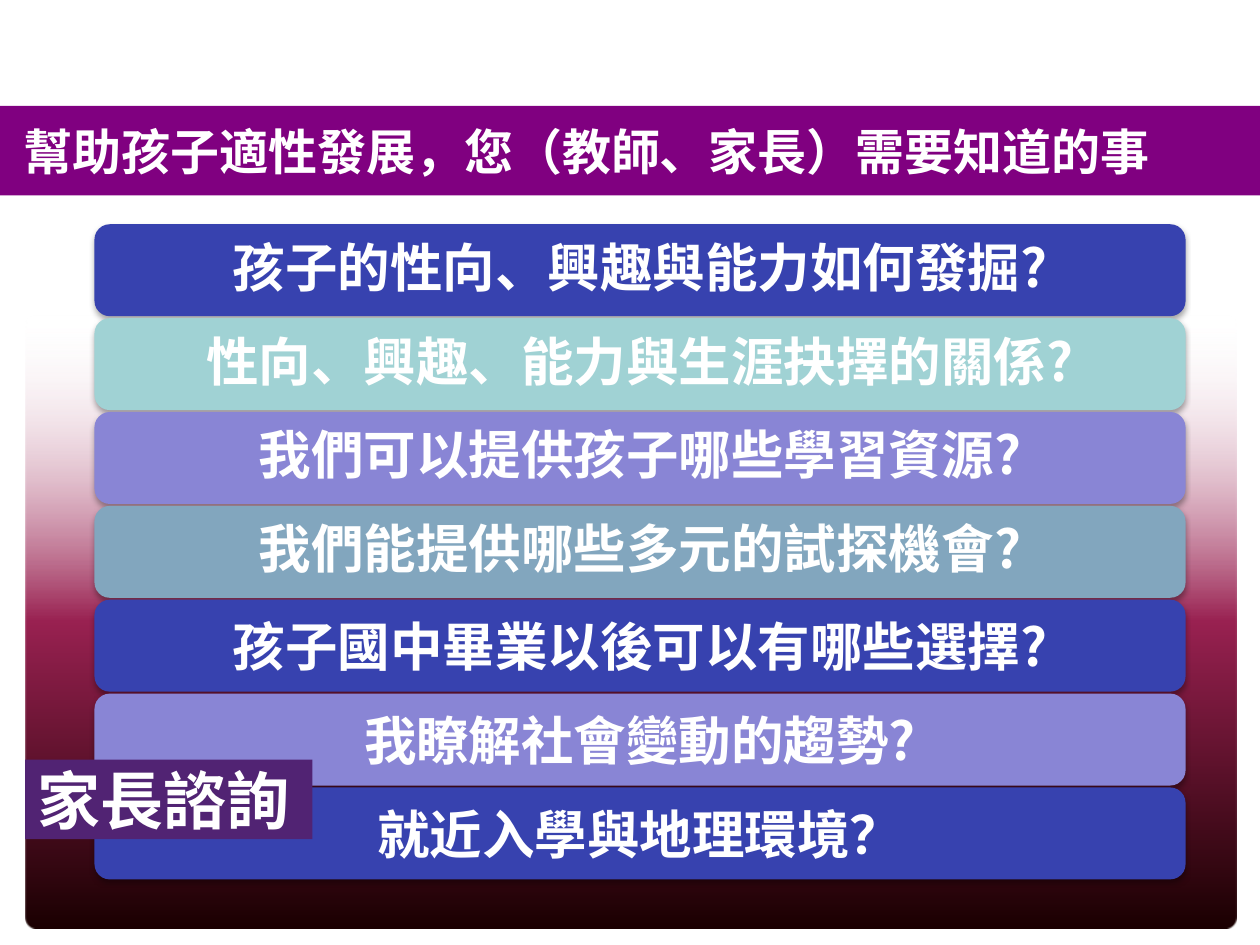
from lxml import etree
from pptx import Presentation
from pptx.dml.color import RGBColor
from pptx.enum.shapes import MSO_SHAPE
from pptx.enum.text import MSO_ANCHOR, PP_ALIGN
from pptx.oxml import parse_xml
from pptx.oxml.ns import qn
from pptx.util import Inches, Pt

FONT = "Noto Sans CJK SC"
NS = 'xmlns:a="http://schemas.openxmlformats.org/drawingml/2006/main"'
BLUE, TEAL, LILAC, STEEL = "3742AF", "A0D2D4", "8985D5", "82A6BE"

TITLE = "幫助孩子適性發展，您（教師、家長）需要知道的事"
TAG = "家長諮詢"
# question, fill, line spacing
QUESTIONS = [
    ("孩子的性向、興趣與能力如何發掘?", BLUE, 0.9),
    ("性向、興趣、能力與生涯抉擇的關係?", TEAL, 0.9),
    ("我們可以提供孩子哪些學習資源?", LILAC, 0.9),
    ("我們能提供哪些多元的試探機會?", STEEL, 0.9),
    ("孩子國中畢業以後可以有哪些選擇?", BLUE, 1.0),
    ("我瞭解社會變動的趨勢?", LILAC, 1.0),
    ("就近入學與地理環境？", BLUE, 1.0),
]
# position, colour, opacity (all in percent), from top to bottom
BACKDROP_STOPS = [(0, "FFFFFF", 0), (50, "992151", 100), (100, "1A0001", 100)]

LIST_LEFT, LIST_TOP, LIST_WIDTH = 0.75, 1.78, 8.66
ROW_HEIGHT, ROW_PITCH = 0.73, 0.745


def rgb(hex_colour):
    return RGBColor.from_string(hex_colour)


def add_box(kind, left, top, width, height, fill=None):
    box = slide.shapes.add_shape(kind, *map(Inches, (left, top, width, height)))
    box.shadow.inherit = False
    box.line.fill.background()
    if fill:
        box.fill.solid()
        box.fill.fore_color.rgb = rgb(fill)
    return box


def write(box, text, size, align=PP_ALIGN.LEFT, inset=0.1, spacing=1.0):
    frame = box.text_frame
    frame.word_wrap = True
    frame.vertical_anchor = MSO_ANCHOR.MIDDLE
    frame.margin_left = frame.margin_right = Inches(inset)
    paragraph = frame.paragraphs[0]
    paragraph.alignment = align
    paragraph.line_spacing = spacing
    run = paragraph.add_run()
    run.text = text
    run.font.size = Pt(size)
    run.font.bold = True
    run.font.name = FONT
    run.font.color.rgb = rgb("FFFFFF")
    east_asian = etree.SubElement(run.font._element, qn("a:ea"))
    east_asian.set("typeface", FONT)


def fade_down(box, stops):
    stop_xml = "".join(
        f'<a:gs pos="{pos * 1000}"><a:srgbClr val="{colour}">'
        f'<a:alpha val="{opacity * 1000}"/></a:srgbClr></a:gs>'
        for pos, colour, opacity in stops)
    gradient = parse_xml(f'<a:gradFill {NS} rotWithShape="1"><a:gsLst>{stop_xml}</a:gsLst>'
                         '<a:lin ang="5400000" scaled="0"/></a:gradFill>')
    box._element.spPr.find(qn("a:prstGeom")).addnext(gradient)


def add_soft_shadow(box):
    effects = box._element.spPr.find(qn("a:effectLst"))
    effects.append(parse_xml(
        f'<a:outerShdw {NS} blurRad="{Pt(3.1)}" dist="{Pt(1.8)}" dir="5400000" '
        'rotWithShape="0"><a:srgbClr val="000000"><a:alpha val="35000"/>'
        '</a:srgbClr></a:outerShdw>'))


prs = Presentation()
prs.slide_width, prs.slide_height = Inches(10), Inches(7.5)
slide = prs.slides.add_slide(prs.slide_layouts[6])

backdrop = add_box(MSO_SHAPE.ROUNDED_RECTANGLE, 0.2, 2.5, 9.61, 4.87)
backdrop.adjustments[0] = 0.02
fade_down(backdrop, BACKDROP_STOPS)

for row, (question, fill, spacing) in enumerate(QUESTIONS):
    bar = add_box(MSO_SHAPE.ROUNDED_RECTANGLE, LIST_LEFT, LIST_TOP + row * ROW_PITCH,
                  LIST_WIDTH, ROW_HEIGHT, fill)
    add_soft_shadow(bar)
    write(bar, question, 30, align=PP_ALIGN.CENTER, inset=0.12, spacing=spacing)

title_band = add_box(MSO_SHAPE.RECTANGLE, 0, 0.84, 10, 0.71, "800080")
write(title_band, TITLE, 28, inset=0.19)

tag = add_box(MSO_SHAPE.RECTANGLE, 0.2, 6.03, 2.28, 0.63, "512373")
write(tag, TAG, 36)

prs.save("out.pptx")
